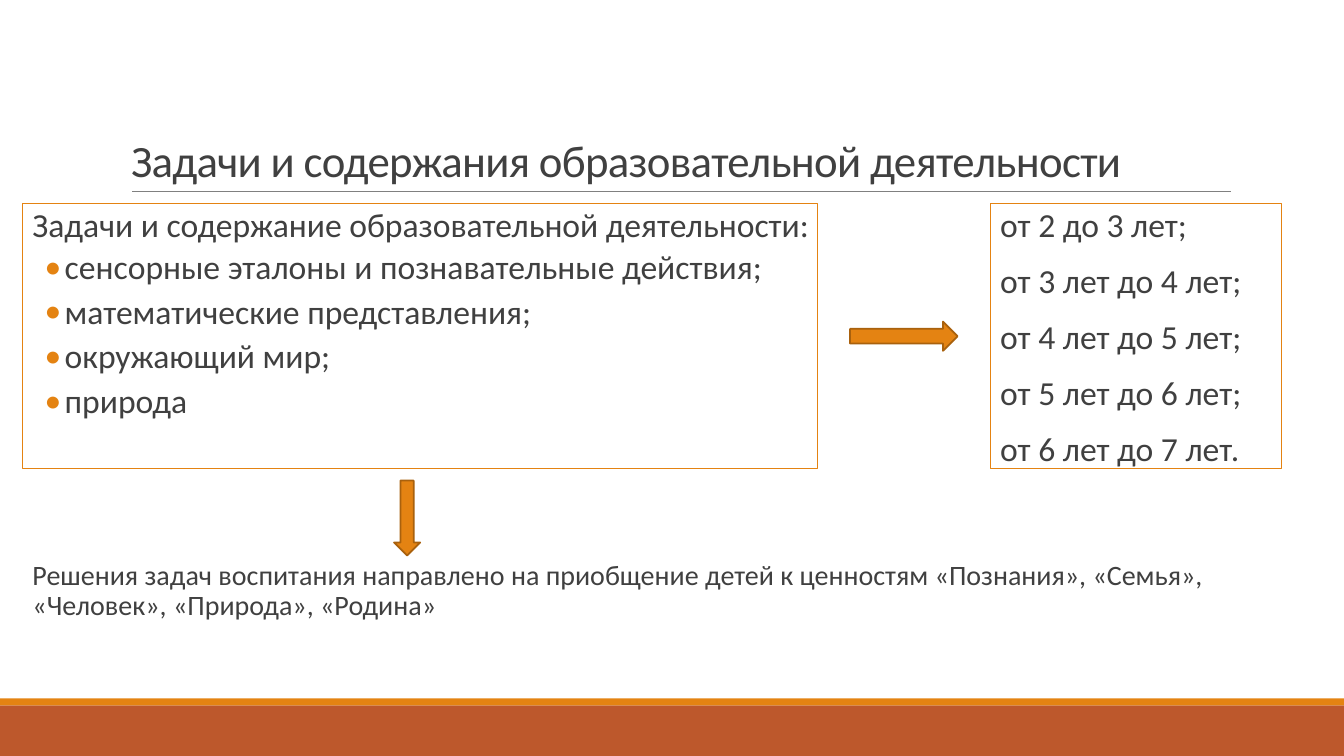
from pptx import Presentation, util as u
from pptx.dml.color import RGBColor
from pptx.enum import shapes, text
from pptx.oxml.ns import qn
from lxml import etree

ORANGE = RGBColor(0xE4, 0x83, 0x12)
RUST = RGBColor(0xBD, 0x58, 0x2C)
BROWN = RGBColor(0xA9, 0x61, 0x0D)
GRAY = RGBColor(0x80, 0x80, 0x80)
DARK = RGBColor(0x40, 0x40, 0x40)

WIDTH, HEIGHT = u.Inches(13.33), u.Inches(7.5)
COL, ROW = WIDTH / 120, HEIGHT / 75

FRAME = dict(margin_left=0, margin_right=0, margin_top=u.Inches(0.05),
             margin_bottom=u.Inches(0.05), word_wrap=True,
             auto_size=text.MSO_AUTO_SIZE.NONE,
             vertical_anchor=text.MSO_ANCHOR.TOP)
PLAIN = dict(bullet=" ", margin=0.1, indent=-0.1, level=0, before=12, after=2)
BULLET = dict(bullet="•", margin=0.42, indent=-0.2, level=1, before=2, after=4)

TITLE = "Задачи и содержания образовательной деятельности"
TASKS = [("Задачи и содержание образовательной деятельности:", PLAIN),
         ("сенсорные эталоны и познавательные действия;", BULLET),
         ("математические представления;", BULLET),
         ("окружающий мир;", BULLET),
         ("природа", BULLET)]
AGES = [(age, PLAIN) for age in (
    "от 2 до 3 лет;", "от 3 лет до 4 лет;", "от 4 лет до 5 лет;",
    "от 5 лет до 6 лет;", "от 6 лет до 7 лет.")]
VALUES = [("Решения задач воспитания направлено на приобщение детей к ценностям "
           "«Познания», «Семья», «Человек», «Природа», «Родина»", PLAIN)]


def grid(col, row, cols, rows):
    return [round(n) for n in (col * COL, row * ROW, cols * COL, rows * ROW)]


def apply(obj, values):
    for name, value in values.items():
        setattr(obj, name, value)


def place(sp, box):
    apply(sp, dict(zip(("left", "top", "width", "height"), box)))


def style_font(font, size):
    apply(font, dict(name="Calibri", size=u.Pt(size)))
    font.color.rgb = DARK


def outline(sp, color, width):
    sp.line.color.rgb = color
    sp.line.width = u.Pt(width)


def add_bullet(p, style):
    pPr = p._p.get_or_add_pPr()
    pPr.set("marL", str(u.Inches(style["margin"])))
    pPr.set("indent", str(u.Inches(style["indent"])))
    color = etree.SubElement(pPr, qn("a:buClr"))
    etree.SubElement(color, qn("a:srgbClr"), val=str(ORANGE))
    etree.SubElement(pPr, qn("a:buFont"), typeface="Calibri")
    etree.SubElement(pPr, qn("a:buChar"), char=style["bullet"])


def fill_text(sp, lines, size):
    tf = sp.text_frame
    apply(tf, FRAME)
    for i, (line, style) in enumerate(lines):
        p = tf.add_paragraph() if i else tf.paragraphs[0]
        add_bullet(p, style)
        apply(p, dict(level=style["level"], line_spacing=0.9,
                      space_before=u.Pt(style["before"] if i else 0),
                      space_after=u.Pt(style["after"]),
                      alignment=text.PP_ALIGN.LEFT))
        r = p.add_run()
        r.text = line
        style_font(r.font, size)


def add_preset(s, kind, box, color):
    sp = s.shapes.add_shape(kind, *box)
    sp.shadow.inherit = False
    sp.fill.solid()
    sp.fill.fore_color.rgb = color
    sp.line.fill.background()
    return sp


def add_footer(s, box):
    left, top, width, height = box
    stripe = round(height * 0.12)
    for y, h, color in ((top + stripe, height - stripe, RUST), (top, stripe, ORANGE)):
        add_preset(s, shapes.MSO_SHAPE.RECTANGLE, (left, y, width, h), color)


def add_title(s, box):
    left, top, width, height = box
    sp = s.shapes.title
    place(sp, box)
    tf = sp.text_frame
    apply(tf, dict(word_wrap=True, auto_size=text.MSO_AUTO_SIZE.NONE,
                   vertical_anchor=text.MSO_ANCHOR.BOTTOM))
    p = tf.paragraphs[0]
    apply(p, dict(line_spacing=0.85, alignment=text.PP_ALIGN.LEFT))
    r = p.add_run()
    r.text = TITLE
    style_font(r.font, 32)
    r.font._element.set("spc", "-50")
    base, inset = top + height, round(COL)
    rule = s.shapes.add_connector(shapes.MSO_CONNECTOR.STRAIGHT,
                                  left + inset, base, left + width, base)
    outline(rule, GRAY, 0.5)
    etree.SubElement(rule._element.spPr, qn("a:effectLst"))


def add_panel(sp, box, lines):
    place(sp, box)
    outline(sp, ORANGE, 0.75)
    fill_text(sp, lines, 24)


def add_arrow(s, box, rotation=0):
    sp = add_preset(s, shapes.MSO_SHAPE.RIGHT_ARROW, box, ORANGE)
    outline(sp, BROWN, 1.25)
    sp.rotation = rotation


def add_note(s, box):
    fill_text(s.shapes.add_textbox(*box), VALUES, 20)


def main():
    prs = Presentation()
    apply(prs, dict(slide_width=WIDTH, slide_height=HEIGHT))
    s = prs.slides.add_slide(prs.slide_layouts[3])
    add_footer(s, grid(0, 69.3, 120, 5.7))
    add_title(s, grid(10.8, 3.1, 99.1, 15.9))
    add_panel(s.placeholders[1], grid(2, 20.2, 71, 26.3), TASKS)
    add_panel(s.placeholders[2], grid(88.4, 20.2, 26, 26.3), AGES)
    add_arrow(s, grid(75.9, 31.9, 9.6, 2.9))
    add_note(s, grid(2, 55.2, 114.3, 9.7))
    add_arrow(s, grid(33, 50.1, 6.7, 2.6), 90)
    prs.save("out.pptx")


if __name__ == "__main__":
    main()
